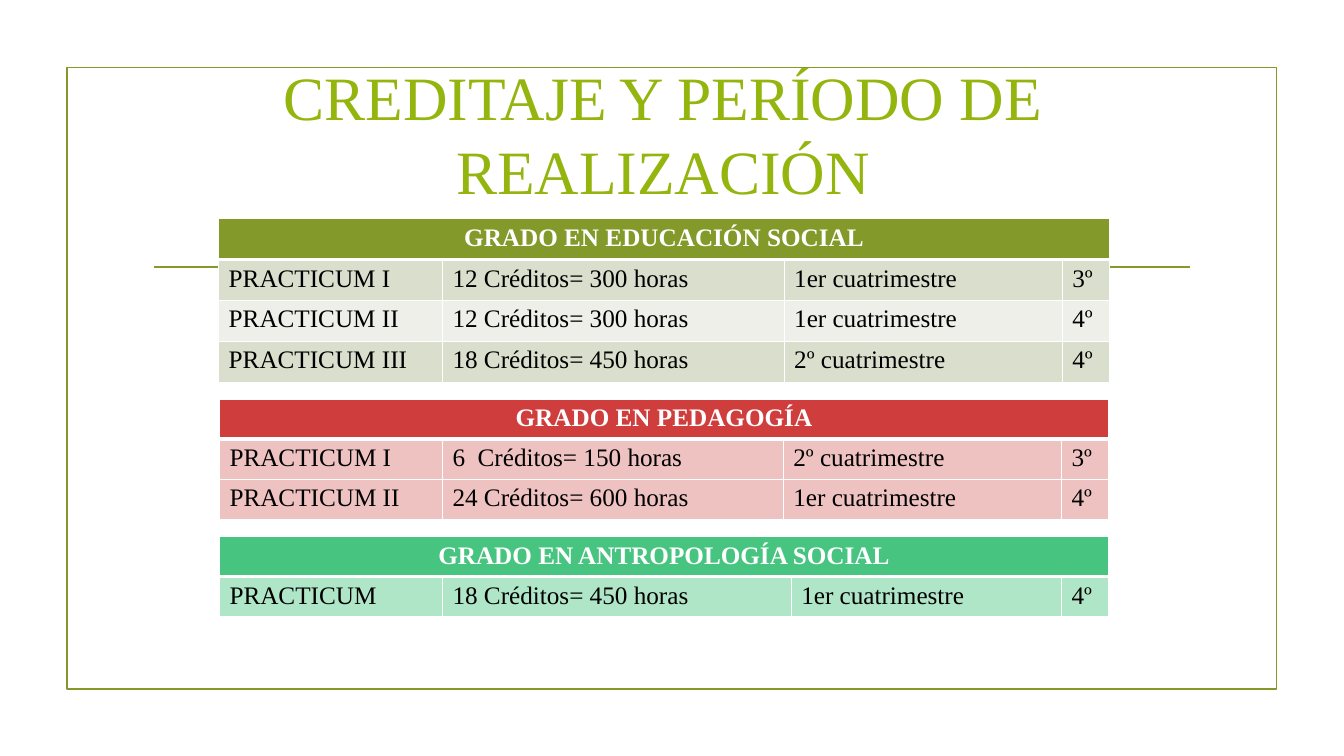
from lxml import etree
from pptx import Presentation
from pptx.dml.color import RGBColor
from pptx.enum.shapes import MSO_CONNECTOR, MSO_SHAPE
from pptx.enum.text import MSO_ANCHOR, MSO_AUTO_SIZE, PP_ALIGN
from pptx.oxml.ns import qn
from pptx.util import Cm, Pt

STRAIGHT = MSO_CONNECTOR.STRAIGHT
RECTANGLE = MSO_SHAPE.RECTANGLE
MIDDLE = MSO_ANCHOR.MIDDLE
NO_AUTOFIT = MSO_AUTO_SIZE.NONE
CENTER = PP_ALIGN.CENTER
LEFT = PP_ALIGN.LEFT

COLORS = {
    "olive": "83992A",
    "olive_band": "D9DECD",
    "olive_pale": "EDEFE8",
    "lime": "94B50E",
    "red": "C00000",
    "green": "00B050",
    "white": "FFFFFF",
    "black": "000000",
}

DEGREES = [
    {
        "place": (5.51, 5.51),
        "columns": (5.64, 8.61, 7.01, 1.19),
        "row_height": 1.03,
        "header": ("olive", 100),
        "bands": [("olive_band", 100), ("olive_pale", 100)],
        "name": "GRADO EN EDUCACIÓN SOCIAL",
        "rows": [
            ("PRACTICUM I", "12 Créditos= 300 horas", "1er cuatrimestre", "3º"),
            ("PRACTICUM II", "12 Créditos= 300 horas", "1er cuatrimestre", "4º"),
            ("PRACTICUM III", "18 Créditos= 450 horas", "2º cuatrimestre", "4º"),
        ],
    },
    {
        "place": (5.53, 10.06),
        "columns": (5.62, 8.59, 7.01, 1.19),
        "row_height": 1.01,
        "header": ("red", 76),
        "bands": [("red", 24)],
        "name": "GRADO EN PEDAGOGÍA",
        "rows": [
            ("PRACTICUM I", "6  Créditos= 150 horas", "2º cuatrimestre", "3º"),
            ("PRACTICUM II", "24 Créditos= 600 horas", "1er cuatrimestre", "4º"),
        ],
    },
    {
        "place": (5.53, 13.52),
        "columns": (5.62, 8.79, 6.81, 1.19),
        "row_height": 1.01,
        "header": ("green", 72),
        "bands": [("green", 31)],
        "name": "GRADO EN ANTROPOLOGÍA SOCIAL",
        "rows": [
            ("PRACTICUM", "18 Créditos= 450 horas", "1er cuatrimestre", "4º"),
        ],
    },
]


class SlideBuilder:
    font_name = "Times New Roman"
    line_width = 1.25

    def __init__(self, slide):
        self.slide = slide

    def color(self, name):
        return RGBColor.from_string(COLORS[name])

    def add_text(self, frame, text, size, color, bold=False, align=LEFT):
        para = frame.paragraphs[0]
        para.alignment = align
        span = para.add_run()
        span.text = text
        span.font.name = self.font_name
        span.font.size = Pt(size)
        span.font.bold = bold
        span.font.color.rgb = self.color(color)

    def stroke(self, line):
        line.color.rgb = self.color("olive")
        line.width = Pt(self.line_width)

    def frame(self, left, top, width, height):
        box = self.slide.shapes.add_shape(
            RECTANGLE, Cm(left), Cm(top), Cm(width), Cm(height))
        box.shadow.inherit = False
        box.fill.background()
        self.stroke(box.line)

    def rule(self, left, right, y):
        rule = self.slide.shapes.add_connector(
            STRAIGHT, Cm(left), Cm(y), Cm(right), Cm(y))
        self.stroke(rule.line)
        etree.SubElement(rule._element.spPr, qn("a:effectLst"))

    def title(self, text, left, top, width, height):
        title = self.slide.shapes.title
        title.left, title.top = Cm(left), Cm(top)
        title.width, title.height = Cm(width), Cm(height)
        frame = title.text_frame
        frame.word_wrap = True
        frame.auto_size = NO_AUTOFIT
        frame.vertical_anchor = MIDDLE
        self.add_text(frame, text, 44, "lime", align=CENTER)

    def fill_cell(self, cell, color, opacity):
        cell.fill.solid()
        cell.fill.fore_color.rgb = self.color(color)
        if opacity < 100:
            shade = cell._tc.tcPr.find(".//" + qn("a:srgbClr"))
            etree.SubElement(shade, qn("a:alpha"), val=str(opacity * 1000))

    def border_cell(self, cell, top, bottom):
        sides = {"a:lnL": 1, "a:lnR": 1, "a:lnT": top, "a:lnB": bottom}
        for index, (side, width) in enumerate(sides.items()):
            border = etree.Element(qn(side), w=str(Pt(width)))
            solid = etree.SubElement(border, qn("a:solidFill"))
            etree.SubElement(solid, qn("a:srgbClr"), val=COLORS["white"])
            cell._tc.tcPr.insert(index, border)

    def degree_table(self, degree):
        left, top = degree["place"]
        columns, rows = degree["columns"], degree["rows"]
        height = degree["row_height"]
        count = len(rows) + 1
        table = self.slide.shapes.add_table(
            count, len(columns), Cm(left), Cm(top),
            Cm(sum(columns)), Cm(height * count)).table
        for column, width in zip(table.columns, columns):
            column.width = Cm(width)
        for row in table.rows:
            row.height = Cm(height)

        for cell in table.rows[0].cells:
            self.fill_cell(cell, *degree["header"])
            self.border_cell(cell, 1, 3)
        header = table.cell(0, 0)
        header.merge(table.cell(0, len(columns) - 1))
        self.add_text(header.text_frame, degree["name"], 18, "white", True, CENTER)

        bands = degree["bands"]
        for index, values in enumerate(rows):
            for cell, value in zip(table.rows[index + 1].cells, values):
                self.fill_cell(cell, *bands[index % len(bands)])
                self.border_cell(cell, 3 if index == 0 else 1, 1)
                self.add_text(cell.text_frame, value, 18, "black")


def main():
    deck = Presentation()
    deck.slide_width, deck.slide_height = Cm(33.87), Cm(19.05)
    page = SlideBuilder(deck.slides.add_slide(deck.slide_layouts[5]))
    page.frame(1.69, 1.7, 30.48, 15.67)
    page.rule(3.89, 30, 6.73)
    page.title("CREDITAJE Y PERÍODO DE REALIZACIÓN", 1.5, 1.6, 30.43, 3.48)
    for degree in DEGREES:
        page.degree_table(degree)
    deck.save("out.pptx")


if __name__ == "__main__":
    main()
